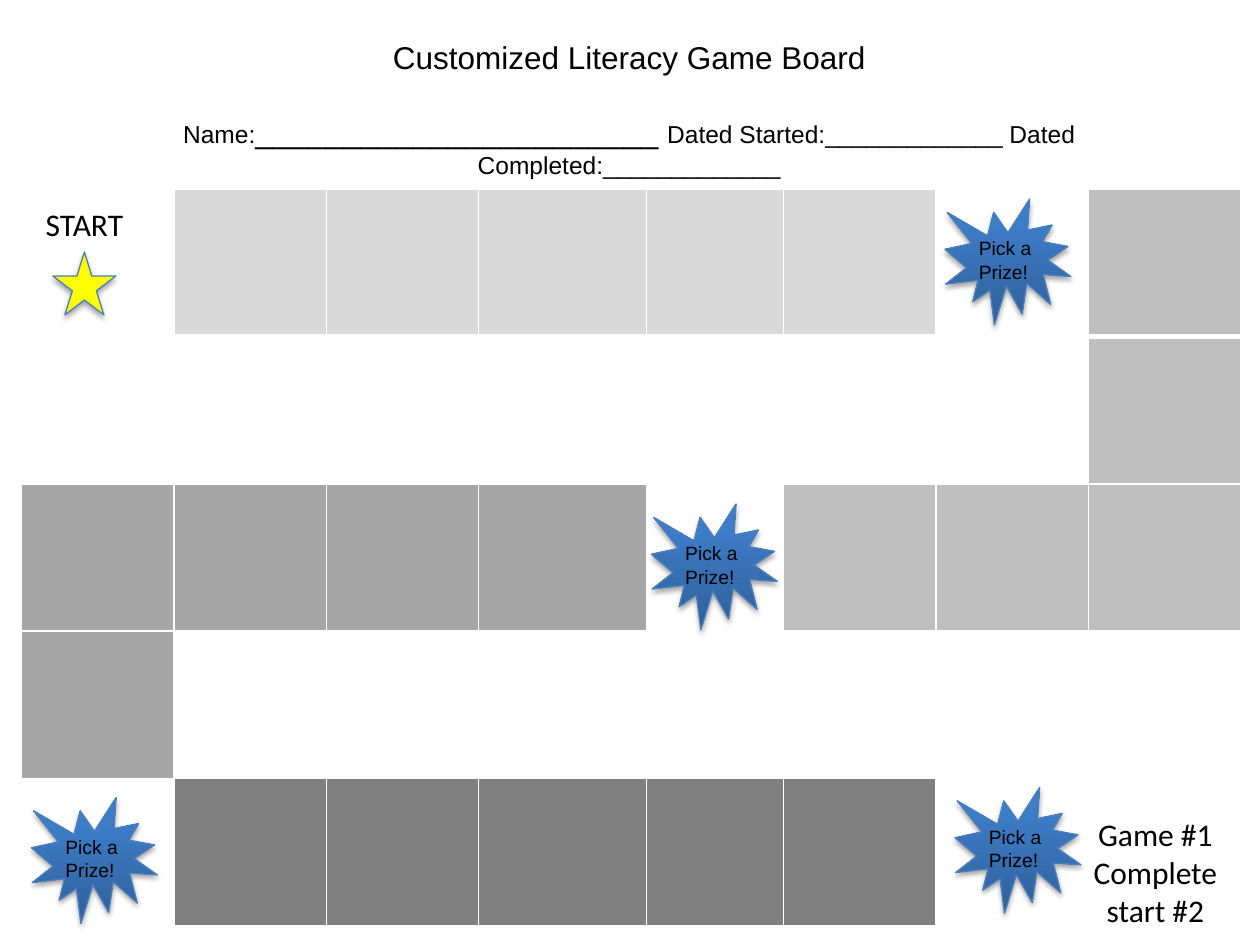
from lxml.etree import SubElement
from pptx import Presentation
from pptx.dml.color import RGBColor
from pptx.enum.shapes import MSO_SHAPE
from pptx.enum.text import MSO_ANCHOR, MSO_AUTO_SIZE, PP_ALIGN
from pptx.oxml.ns import qn
from pptx.util import Inches, Pt

TITLE = [
    [("Customized Literacy Game Board", 18)],
    [("Name:", 14), ("_______________________ ", 18),
     ("Dated Started:_____________ Dated Completed:_____________", 14)],
]
BOARD = [
    ".11111.2",
    ".......2",
    "3333.222",
    "3.......",
    ".44444..",
]
SHADES = {"1": "D9D9D9", "2": "BFBFBF", "3": "A6A6A6", "4": "808080"}
COLUMNS = [1.21, 1.21, 1.21, 1.33, 1.09, 1.21, 1.21, 1.21]
ROW_HEIGHT = 1.17
PRIZES = [(7.5, 1.58), (5.17, 4), (0.25, 6.33), (7.58, 6.25)]
LABELS = [
    ("START", 0.17, 1.58, 1, 0.4),
    ("Game #1 Complete start #2", 8.42, 6.42, 1.5, 1.01),
]


def rgb(value):
    return RGBColor.from_string(value)


def style_run(r, size, font):
    r.font.size = Pt(size)
    r.font.name = font
    r.font.color.rgb = rgb("000000")


def add_label(s, text, x, y, w, h, size=18, font="Calibri", align=PP_ALIGN.CENTER):
    tf = s.shapes.add_textbox(Inches(x), Inches(y), Inches(w), Inches(h)).text_frame
    tf.word_wrap = True
    tf.text = text
    p = tf.paragraphs[0]
    p.alignment = align
    style_run(p.runs[0], size, font)


def add_badge(s, kind, x, y, size):
    sp = s.shapes.add_shape(kind, Inches(x), Inches(y), Inches(size), Inches(size))
    sp.line.color.rgb = rgb("4B7EBC")
    sp.line.width = Pt(0.75)
    sp.shadow.inherit = False
    effects = sp._element.spPr.find(qn("a:effectLst"))
    shadow = SubElement(effects, qn("a:outerShdw"), blurRad=str(Pt(3.1)),
                        dist=str(Pt(1.8)), dir="5400000", rotWithShape="0")
    color = SubElement(shadow, qn("a:srgbClr"), val="000000")
    SubElement(color, qn("a:alpha"), val="35000")
    return sp


def add_prize(s, x, y):
    sp = add_badge(s, MSO_SHAPE.EXPLOSION1, x, y, 1)
    sp.fill.gradient()
    sp.fill.gradient_angle = 90
    stops = [(0, "2F5F99"), (0.8, "3D7CC7")]
    for stop, (position, color) in zip(sp.fill.gradient_stops, stops):
        stop.position = position
        stop.color.rgb = rgb(color)


def set_border(cell, side, width):
    ln = SubElement(cell._tc.get_or_add_tcPr(), qn(f"a:ln{side}"), w=str(Pt(width)))
    fill = SubElement(ln, qn("a:solidFill"))
    SubElement(fill, qn("a:srgbClr"), val="FFFFFF")


def add_board(s):
    table = s.shapes.add_table(
        len(BOARD), len(COLUMNS), Inches(0.17), Inches(1.5),
        Inches(sum(COLUMNS)), Inches(ROW_HEIGHT * len(BOARD))).table
    table.first_row = table.horz_banding = False
    for column, width in zip(table.columns, COLUMNS):
        column.width = Inches(width)
    for i, line in enumerate(BOARD):
        table.rows[i].height = Inches(ROW_HEIGHT)
        for j, mark in enumerate(line):
            cell = table.cell(i, j)
            widths = {"L": 1, "R": 1, "T": 3 if i == 1 else 1, "B": 3 if i == 0 else 1}
            for side, width in widths.items():
                set_border(cell, side, width)
            if mark in SHADES:
                cell.fill.solid()
                cell.fill.fore_color.rgb = rgb(SHADES[mark])
            else:
                cell.fill.background()


def add_title(s):
    sp = s.shapes.title
    sp.left, sp.top, sp.width, sp.height = map(Inches, (0.33, 0.25, 9.33, 1.01))
    tf = sp.text_frame
    tf.word_wrap = True
    tf.auto_size = MSO_AUTO_SIZE.NONE
    tf.vertical_anchor = MSO_ANCHOR.TOP
    for i, parts in enumerate(TITLE):
        p = tf.add_paragraph() if i else tf.paragraphs[0]
        p.alignment = PP_ALIGN.CENTER
        p.space_before = Pt(21 * i)
        for text, size in parts:
            r = p.add_run()
            r.text = text
            style_run(r, size, "Arial")


def main():
    """Build the literacy game board slide."""
    prs = Presentation()
    prs.slide_width, prs.slide_height = Inches(10), Inches(7.5)
    s = prs.slides.add_slide(prs.slide_layouts[5])
    add_title(s)
    star = add_badge(s, MSO_SHAPE.STAR_5_POINT, 0.42, 2, 0.5)
    star.fill.solid()
    star.fill.fore_color.rgb = rgb("FFFF00")
    add_board(s)
    for label in LABELS:
        add_label(s, *label)
    for x, y in PRIZES:
        add_prize(s, x, y)
        add_label(s, "Pick a Prize!", x + 0.17, y + 0.25, 0.67, 0.47,
                  11, "Arial", PP_ALIGN.LEFT)
    prs.save("out.pptx")


if __name__ == "__main__":
    main()
